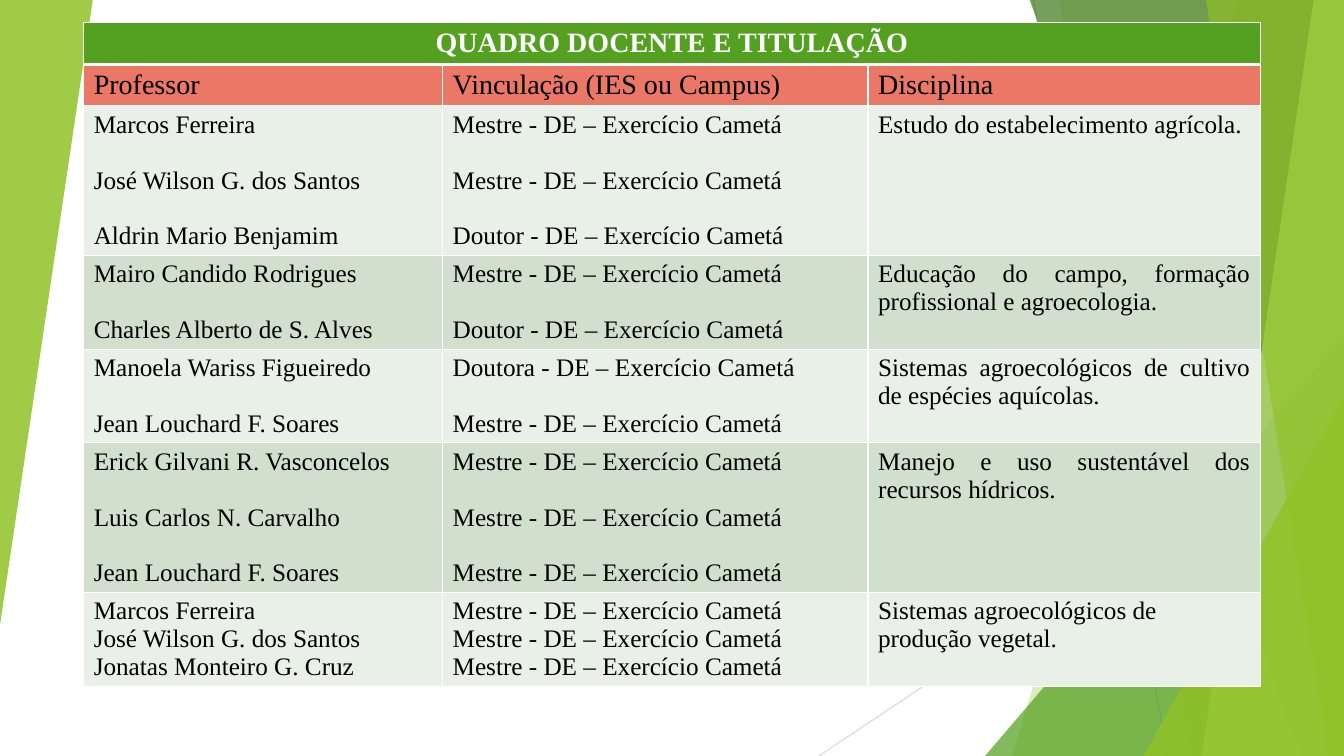
from collections import namedtuple

from lxml.etree import SubElement
from pptx import Presentation
from pptx.dml.color import RGBColor
from pptx.enum.shapes import MSO_CONNECTOR, MSO_SHAPE
from pptx.enum.text import PP_ALIGN
from pptx.oxml import parse_xml
from pptx.oxml.ns import nsdecls, qn
from pptx.util import Inches, Pt

Box = namedtuple("Box", "left top width height")

FONT = "Times New Roman"
BLACK = RGBColor(0x00, 0x00, 0x00)
WHITE = RGBColor(0xFF, 0xFF, 0xFF)
GRAY = RGBColor(0xBF, 0xBF, 0xBF)
LIGHT_GRAY = RGBColor(0xD9, 0xD9, 0xD9)
LIME = RGBColor(0x90, 0xC2, 0x26)
GREEN = RGBColor(0x54, 0xA0, 0x21)
DARK_GREEN = RGBColor(0x3F, 0x78, 0x19)
PALE_LIME = RGBColor(0xC0, 0xE4, 0x74)
CORAL = RGBColor(0xEB, 0x77, 0x66)
BANDS = (RGBColor(0xE9, 0xF0, 0xE8), RGBColor(0xD1, 0xDF, 0xCD))

TITLE = "QUADRO DOCENTE E TITULAÇÃO"
HEADINGS = ("Professor", "Vinculação (IES ou Campus)", "Disciplina")
COLUMN_WIDTHS = (3.56, 4.22, 3.89)
ROW_HEIGHTS = (0.42, 0.41, 1.48, 0.93, 0.93, 1.48, 0.93)
LINE_GAP = 19.9
POST = " - DE – Exercício Cametá"

Course = namedtuple("Course", "teachers degrees subject align gap")
COURSES = (
    Course(("Marcos Ferreira", "José Wilson G. dos Santos", "Aldrin Mario Benjamim"),
           ("Mestre", "Mestre", "Doutor"),
           "Estudo do estabelecimento agrícola.", PP_ALIGN.LEFT, LINE_GAP),
    Course(("Mairo Candido Rodrigues", "Charles Alberto de S. Alves"),
           ("Mestre", "Doutor"),
           "Educação do campo, formação profissional e agroecologia.",
           PP_ALIGN.JUSTIFY, LINE_GAP),
    Course(("Manoela Wariss Figueiredo", "Jean Louchard F. Soares"),
           ("Doutora", "Mestre"),
           "Sistemas agroecológicos de cultivo de espécies aquícolas.",
           PP_ALIGN.JUSTIFY, LINE_GAP),
    Course(("Erick Gilvani R. Vasconcelos", "Luis Carlos N. Carvalho",
            "Jean Louchard F. Soares"),
           ("Mestre", "Mestre", "Mestre"),
           "Manejo e uso sustentável dos recursos hídricos.",
           PP_ALIGN.JUSTIFY, LINE_GAP),
    Course(("Marcos Ferreira", "José Wilson G. dos Santos", "Jonatas Monteiro G. Cruz"),
           ("Mestre", "Mestre", "Mestre"),
           "Sistemas agroecológicos de produção vegetal.", PP_ALIGN.LEFT, 0),
)


def paint(shape, color, opacity):
    """Give a shape a translucent fill without outline or shadow."""
    shape.shadow.inherit = False
    shape.fill.solid()
    shape.fill.fore_color.rgb = color
    tint = next(shape.element.spPr.iter(qn("a:srgbClr")))
    SubElement(tint, qn("a:alpha"), val=str(opacity * 1000))
    shape.line.fill.background()


def draw_line(page, start, end, color):
    """Draw a thin straight line between two points."""
    line = page.shapes.add_connector(
        MSO_CONNECTOR.STRAIGHT, *(Inches(value) for value in start + end))
    line.line.color.rgb = color
    line.line.width = Pt(0.75)
    SubElement(line.element.spPr, qn("a:effectLst"))


def draw_triangle(page, box, color, opacity, rotation=0):
    """Draw a right triangle whose apex stands over its right side."""
    triangle = page.shapes.add_shape(
        MSO_SHAPE.ISOSCELES_TRIANGLE, *(Inches(value) for value in box))
    triangle.adjustments[0] = 1.0
    triangle.rotation = rotation
    paint(triangle, color, opacity)


def draw_blade(page, box, top_left, bottom_left, color, opacity):
    """Draw a slanted panel that reaches the right edge of the box."""
    top, right, bottom = box.top - 0.01, box.left + box.width, box.top + box.height
    corners = [(Inches(across), Inches(down)) for across, down in (
        (box.left + top_left, top), (right, top),
        (right, bottom), (box.left + bottom_left, bottom))]
    builder = page.shapes.build_freeform(*corners[0], scale=1.0)
    builder.add_line_segments(corners[1:], close=True)
    paint(builder.convert_to_shape(), color, opacity)


def draw_backdrop(page, box):
    """Place the green facets along both sides of the box."""
    left, top, width, height = box
    right, bottom = left + width, top + height
    draw_line(page, (left + 10.25, top), (left + 11.58, bottom), GRAY)
    draw_line(page, (right, top + 4.03), (left + 8.12, bottom), LIGHT_GRAY)
    draw_blade(page, box, 12.28, 10.04, LIME, 30)
    draw_blade(page, box, 10.5, 11.83, LIME, 20)
    draw_triangle(page, Box(right - 3.56, bottom - 4.17, 3.56, 4.17), GREEN, 72)
    draw_blade(page, box, 10.21, 12.91, DARK_GREEN, 70)
    draw_blade(page, box, 13.03, 11.92, PALE_LIME, 70)
    draw_blade(page, box, 11.96, 13.18, LIME, 65)
    draw_triangle(page, Box(right - 1.99, bottom - 3.57, 1.99, 3.57), LIME, 80)
    draw_triangle(page, Box(left, top, 0.92, 6.2), LIME, 85, rotation=180)


def style_cell(cell, fill, top=1, bottom=1):
    """Fill a cell and give it white borders."""
    cell.fill.solid()
    cell.fill.fore_color.rgb = fill
    properties = cell._tc.get_or_add_tcPr()
    widths = {"lnL": 1, "lnR": 1, "lnT": top, "lnB": bottom}
    for position, (side, width) in enumerate(widths.items()):
        properties.insert(position, parse_xml(
            f'<a:{side} {nsdecls("a")} w="{Pt(width)}"><a:solidFill>'
            f'<a:srgbClr val="{WHITE}"/></a:solidFill></a:{side}>'))


def write_cell(cell, lines, size, align=PP_ALIGN.JUSTIFY, color=BLACK, bold=False, gap=0):
    """Write one paragraph per line with an equal gap between them."""
    frame = cell.text_frame
    look = {"name": FONT, "size": Pt(size), "bold": bold}
    for index, line in enumerate(lines):
        para = frame.add_paragraph() if index else frame.paragraphs[0]
        para.alignment = align
        if index:
            para.space_before = Pt(gap)
        span = para.add_run()
        span.text = line
        span.font.color.rgb = color
        for name, value in look.items():
            setattr(span.font, name, value)


def draw_faculty_table(page, box):
    """Place the table of teachers, degrees and subjects in the box."""
    frame = page.shapes.add_table(
        len(ROW_HEIGHTS), len(COLUMN_WIDTHS), *(Inches(value) for value in box))
    table = frame.table
    table.first_row = table.horz_banding = False
    for column, width in zip(table.columns, COLUMN_WIDTHS):
        column.width = Inches(width)
    for row, height in zip(table.rows, ROW_HEIGHTS):
        row.height = Inches(height)

    for index, heading in enumerate(HEADINGS):
        style_cell(table.cell(0, index), GREEN, bottom=3)
        style_cell(table.cell(1, index), CORAL, top=3)
        write_cell(table.cell(1, index), [heading], 20)
    table.cell(0, 0).merge(table.cell(0, len(HEADINGS) - 1))
    write_cell(table.cell(0, 0), [TITLE], 20, PP_ALIGN.CENTER, WHITE, bold=True)

    for index, course in enumerate(COURSES):
        cells = table.rows[index + 2].cells
        for cell in cells:
            style_cell(cell, BANDS[index % 2])
        write_cell(cells[0], course.teachers, 18, gap=course.gap)
        write_cell(cells[1], [degree + POST for degree in course.degrees], 18,
                   gap=course.gap)
        write_cell(cells[2], [course.subject], 18, course.align)


def main():
    """Build the one-slide deck."""
    deck = Presentation()
    deck.slide_width, deck.slide_height = Inches(13.33), Inches(7.5)
    page = deck.slides.add_slide(deck.slide_layouts[6])
    draw_backdrop(page, Box(0, 0, 13.33, 7.5))
    draw_faculty_table(page, Box(0.83, 0.22, sum(COLUMN_WIDTHS), sum(ROW_HEIGHTS)))
    deck.save("out.pptx")


if __name__ == "__main__":
    main()
